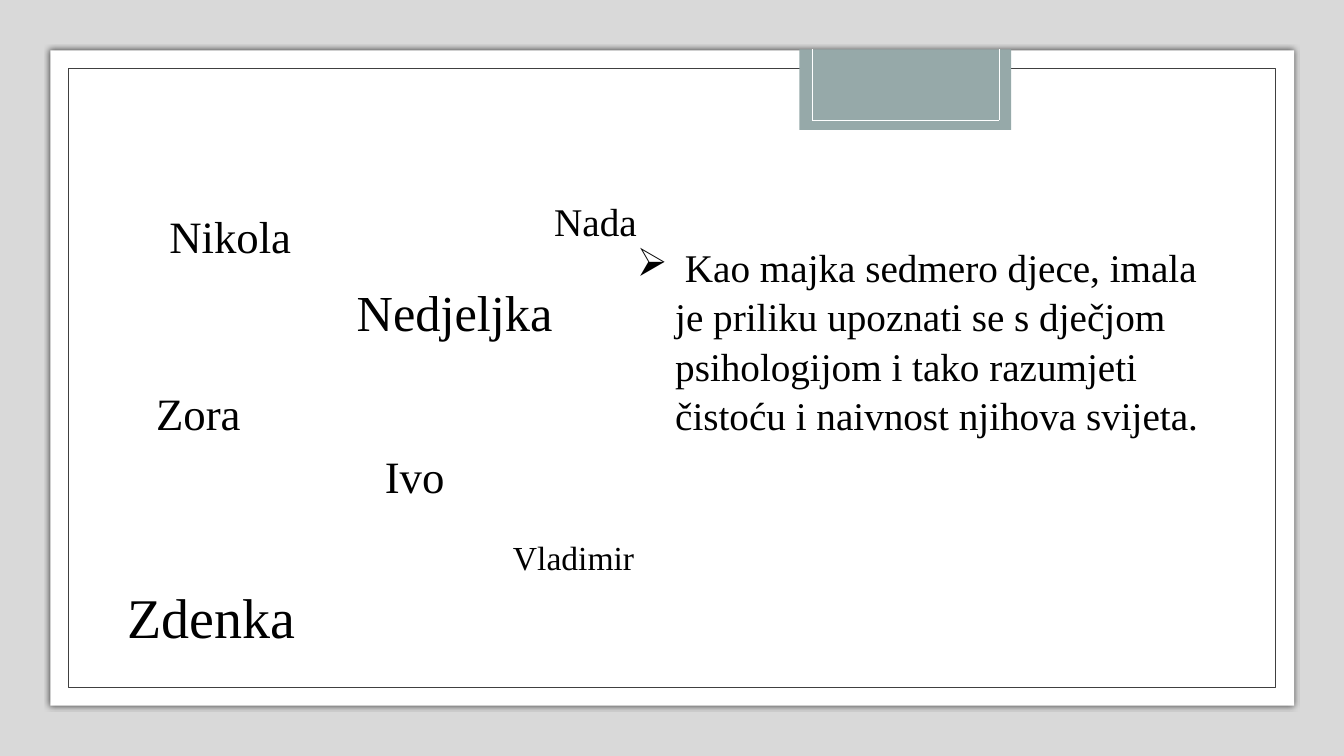
"""Build a slide of scattered children's names beside a bulleted remark."""
from dataclasses import dataclass
from typing import Optional

from lxml.etree import SubElement
from pptx import Presentation
from pptx.dml.color import RGBColor as RGB
from pptx.enum.shapes import MSO_CONNECTOR as CONN, MSO_SHAPE as SHAPE
from pptx.oxml.ns import qn
from pptx.util import Pt


@dataclass(frozen=True)
class Theme:
    """Colours, font and type sizes."""
    grey: str = "D9D9D9"
    white: str = "FFFFFF"
    frame: str = "404040"
    tab: str = "96A9A9"
    ink: str = "000000"
    font: str = "Times New Roman"
    small: int = 24
    body: int = 28
    medium: int = 32
    large: int = 36
    huge: int = 40
    hairline: float = 0.5
    spacing: float = 1.05


@dataclass(frozen=True)
class Panel:
    """A filled rectangle in points."""
    left: float
    top: float
    width: float
    height: float
    fill: str
    line: Optional[str] = None
    shadow: bool = False


@dataclass(frozen=True)
class Stroke:
    """A straight line in points."""
    x1: float
    y1: float
    x2: float
    y2: float


@dataclass(frozen=True)
class Label:
    """A text box in points, with an optional bullet."""
    text: str
    left: float
    top: float
    width: float
    height: float
    size: int
    bullet: Optional[str] = None


T = Theme()
SLIDE_W, SLIDE_H = 960, 540
HANG = 27.4
TAB_LEFT, TAB_RIGHT, TAB_TOP, TAB_BOTTOM = 580.3, 713.5, 35.3, 85.7

PANELS = [
    Panel(0, 0, SLIDE_W, SLIDE_H, T.grey),
    Panel(36, 36, 888.5, 468, T.white, shadow=True),
    Panel(48.5, 49, 862.5, 442, T.white, line=T.frame),
    Panel(571, 35.3, 151.2, 57.6, T.tab),
]
STROKES = [
    Stroke(TAB_LEFT, TAB_TOP, TAB_LEFT, TAB_BOTTOM),
    Stroke(TAB_RIGHT, TAB_TOP, TAB_RIGHT, TAB_BOTTOM),
    Stroke(TAB_LEFT, TAB_BOTTOM, TAB_RIGHT, TAB_BOTTOM),
]
LABELS = [
    Label(" Kao majka sedmero djece, imala je priliku upoznati se s dječjom "
          "psihologijom i tako razumjeti čistoću i naivnost njihova svijeta.",
          447.8, 168.5, 433.4, 143.3, T.body, bullet="➢"),
    Label("Nikola", 113.8, 143.3, 144.7, 46, T.medium),
    Label("Nedjeljka", 247.7, 195.1, 217.4, 51, T.large),
    Label("Zora", 104.4, 270, 216, 46, T.medium),
    Label("Ivo", 267.8, 315.4, 216, 46, T.medium),
    Label("Vladimir", 359.3, 378.7, 108.7, 36, T.small),
    Label("Zdenka", 84.2, 410.4, 216, 55.4, T.huge),
    Label("Nada", 388.8, 135.4, 136.8, 41, T.body),
]


def add_shadow(s) -> None:
    """Give a shape a soft shadow on all sides."""
    effects = s._element.spPr.find(qn("a:effectLst"))
    outer = SubElement(effects, qn("a:outerShdw"), blurRad=str(Pt(4)), dist="0", dir="0")
    color = SubElement(outer, qn("a:srgbClr"), val=T.ink)
    SubElement(color, qn("a:alpha"), val="66000")


def add_panel(shapes, panel: Panel) -> None:
    """Draw a rectangle."""
    s = shapes.add_shape(SHAPE.RECTANGLE, Pt(panel.left), Pt(panel.top),
                         Pt(panel.width), Pt(panel.height))
    s.fill.solid()
    s.fill.fore_color.rgb = RGB.from_string(panel.fill)
    if panel.line:
        s.line.color.rgb = RGB.from_string(panel.line)
        s.line.width = Pt(T.hairline)
    else:
        s.line.fill.background()
    s.shadow.inherit = False
    if panel.shadow:
        add_shadow(s)


def add_stroke(shapes, stroke: Stroke) -> None:
    """Draw a white hairline."""
    s = shapes.add_connector(CONN.STRAIGHT, Pt(stroke.x1), Pt(stroke.y1),
                             Pt(stroke.x2), Pt(stroke.y2))
    s.line.color.rgb = RGB.from_string(T.white)
    s.line.width = Pt(T.hairline)
    SubElement(s._element.spPr, qn("a:effectLst"))


def add_label(shapes, label: Label) -> None:
    """Write a text box."""
    s = shapes.add_textbox(Pt(label.left), Pt(label.top), Pt(label.width), Pt(label.height))
    tf = s.text_frame
    tf.word_wrap = True
    p = tf.paragraphs[0]
    p.text = label.text
    p.line_spacing = T.spacing
    p.font.name = T.font
    p.font.size = Pt(label.size)
    p.font.color.rgb = RGB.from_string(T.ink)
    if label.bullet:
        props = p._p.get_or_add_pPr()
        props.set("marL", str(Pt(HANG)))
        props.set("indent", str(-Pt(HANG)))
        bullet = SubElement(props, qn("a:buChar"), char=label.bullet)
        props.find(qn("a:defRPr")).addprevious(bullet)


def main() -> None:
    """Assemble and save the slide."""
    prs = Presentation()
    prs.slide_width, prs.slide_height = Pt(SLIDE_W), Pt(SLIDE_H)
    shapes = prs.slides.add_slide(prs.slide_layouts[6]).shapes
    for panel in PANELS:
        add_panel(shapes, panel)
    for stroke in STROKES:
        add_stroke(shapes, stroke)
    for label in LABELS:
        add_label(shapes, label)
    prs.save("out.pptx")


if __name__ == "__main__":
    main()
